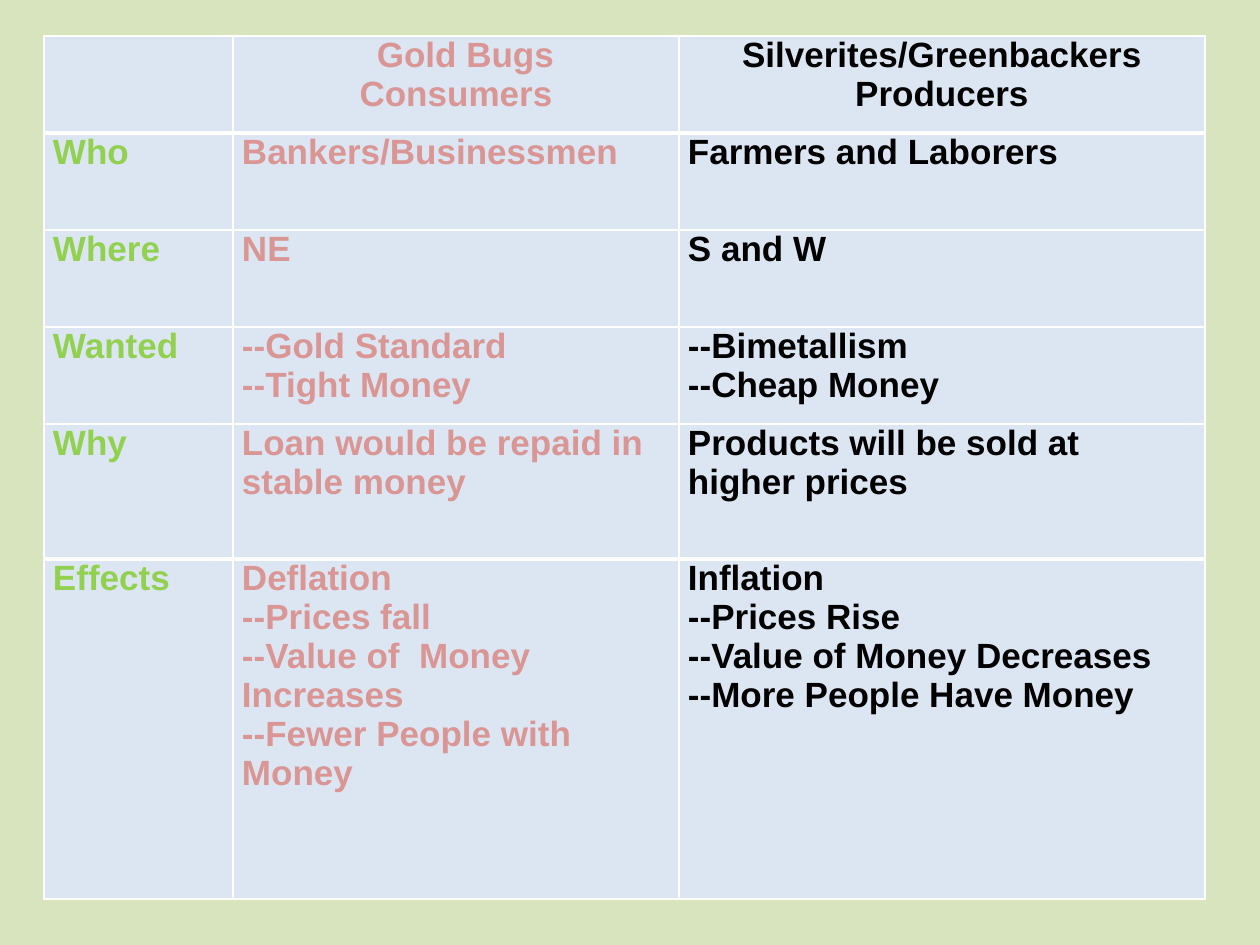
import dataclasses

import pptx
import pptx.dml.color
import pptx.enum.text
import pptx.oxml
import pptx.oxml.ns
import pptx.util

SCALE = 914400 / 126
COLORS = {
    "page": "D7E4BD", "cell": "DCE6F2", "line": "FFFFFF",
    "label": "92D050", "gold": "D99694", "silver": "000000",
}
INKS = ("label", "gold", "silver")
COLS = (189, 446, 526)
LEFT, TOP, INSET = 44, 36, 9
THIN, THICK = 1, 3


@dataclasses.dataclass
class Row:
    label: str
    gold: list[str]
    silver: list[str]
    height: int = 97
    above: int = THIN
    below: int = THIN


ROWS = [
    Row("", ["Gold Bugs", "Consumers"],
        ["Silverites/Greenbackers", "Producers"], below=THICK),
    Row("Who", ["Bankers/Businessmen"], ["Farmers and Laborers"], above=THICK),
    Row("Where", ["NE"], ["S and W"]),
    Row("Wanted", ["--Gold Standard", "--Tight Money"],
        ["--Bimetallism", "--Cheap Money"]),
    Row("Why", ["Loan would be repaid in stable money"],
        ["Products will be sold at higher prices"], height=135, below=THICK),
    Row("Effects",
        ["Deflation", "--Prices fall", "--Value of  Money Increases",
         "--Fewer People with Money"],
        ["Inflation", "--Prices Rise", "--Value of Money Decreases",
         "--More People Have Money"], height=340, above=THICK),
]


def px(n: int) -> pptx.util.Emu:
    return pptx.util.Emu(round(n * SCALE))


def rgb(name: str) -> pptx.dml.color.RGBColor:
    return pptx.dml.color.RGBColor.from_string(COLORS[name])


def write(frame, lines: list[str], *, ink: str, size: int = 20,
          font: str = "Arial", bold: bool = True, center: bool = False) -> None:
    align = pptx.enum.text.PP_ALIGN
    frame.text = "\n".join(lines)
    for para in frame.paragraphs:
        para.alignment = align.CENTER if center else align.LEFT
        para.font.size = pptx.util.Pt(size)
        for run in para.runs:
            run.font.size = pptx.util.Pt(size)
            run.font.name = font
            run.font.bold = bold
            run.font.color.rgb = rgb(ink)


def edge(cell, **widths: int) -> None:
    """Set border widths in points, in the order L, R, T, B."""
    props = cell._tc.get_or_add_tcPr()
    for i, (side, width) in enumerate(widths.items()):
        props.insert(i, pptx.oxml.parse_xml(
            f'<a:ln{side} {pptx.oxml.ns.nsdecls("a")} w="{pptx.util.Pt(width)}">'
            f'<a:solidFill><a:srgbClr val="{COLORS["line"]}"/></a:solidFill>'
            f'</a:ln{side}>'))


def draw(slide, rows: list[Row]) -> None:
    high = sum(row.height for row in rows)
    table = slide.shapes.add_table(
        len(rows), len(COLS), px(LEFT), px(TOP), px(sum(COLS)), px(high)).table
    for col, width in zip(table.columns, COLS):
        col.width = px(width)
    for r, row in enumerate(rows):
        table.rows[r].height = px(row.height)
        for c, lines in enumerate(([row.label], row.gold, row.silver)):
            cell = table.cell(r, c)
            cell.margin_left = cell.margin_right = px(INSET)
            cell.margin_top = cell.margin_bottom = 0
            cell.fill.solid()
            cell.fill.fore_color.rgb = rgb("cell")
            edge(cell, L=THIN, R=THIN, T=row.above, B=row.below)
            write(cell.text_frame, lines, ink=INKS[c], center=r == 0)
    # The first heading line sits a little right of centre.
    first = table.cell(0, 1).text_frame.paragraphs[0]
    first._p.get_or_add_pPr().set("marL", str(px(19)))


def main() -> None:
    deck = pptx.Presentation()
    deck.slide_width, deck.slide_height = px(1260), px(945)
    slide = deck.slides.add_slide(deck.slide_layouts[6])
    slide.background.fill.solid()
    slide.background.fill.fore_color.rgb = rgb("page")
    draw(slide, ROWS)
    deck.save("out.pptx")


if __name__ == "__main__":
    main()
